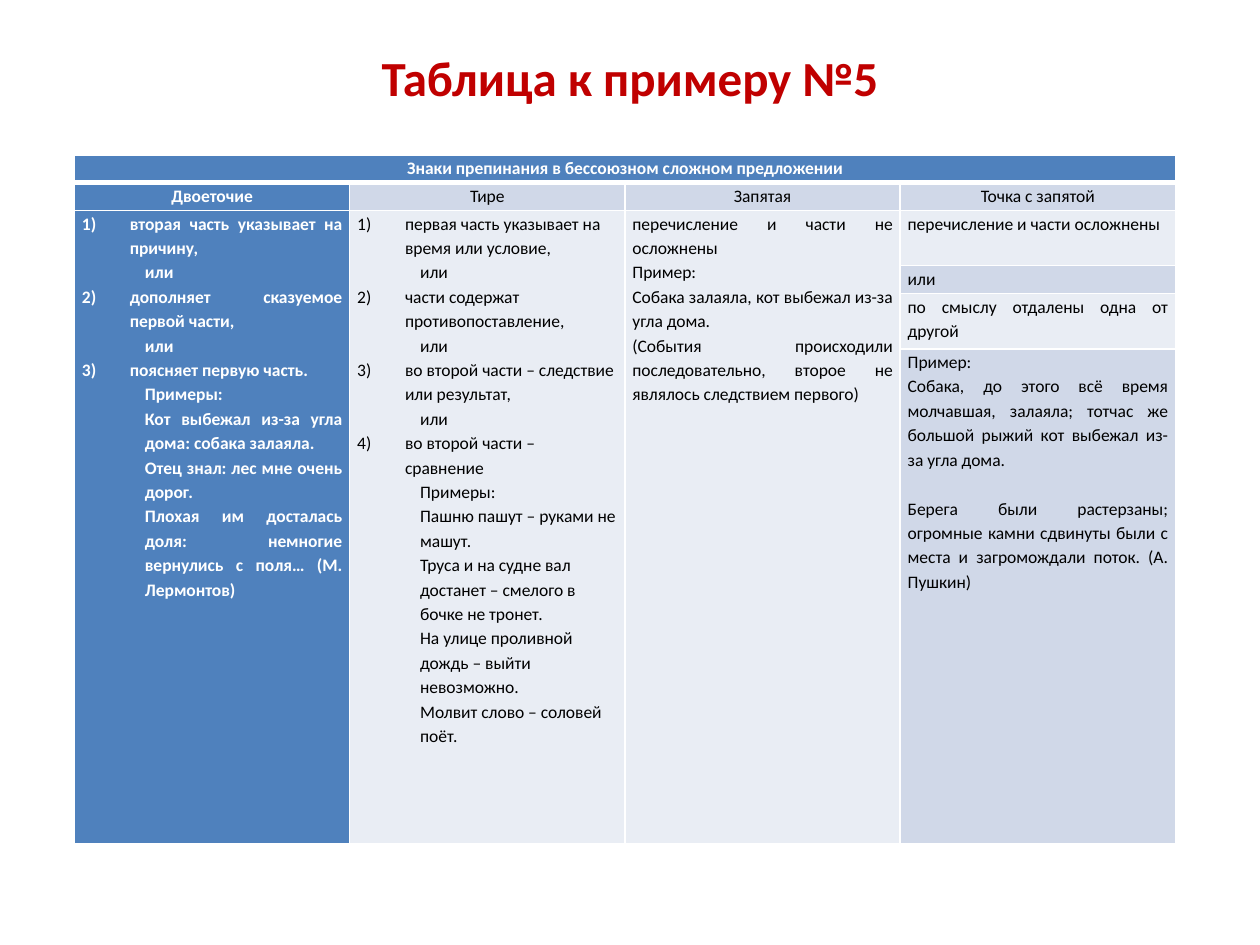
from lxml.etree import SubElement
from pptx import Presentation
from pptx.dml.color import RGBColor
from pptx.enum.text import MSO_ANCHOR, PP_ALIGN
from pptx.oxml.ns import qn
from pptx.util import Inches, Pt

FONT = "Calibri"
HUE = {"red": "C00000", "blue": "4F81BD", "mid": "D0D8E8",
       "pale": "E9EDF4", "white": "FFFFFF", "black": "000000"}
MID, LEFT, JUST = PP_ALIGN.CENTER, PP_ALIGN.LEFT, PP_ALIGN.JUSTIFY
STEP = 14  # height of one text line in the table, points

# Paragraph kinds: "n" numbered, "i" indented, "p" plain, "g" plain after a gap
OR = ("i", "или")
COLON = [
    ("n", "вторая часть указывает на причину,"), OR,
    ("n", "дополняет сказуемое первой части,"), OR,
    ("n", "поясняет первую часть."),
    ("i", "Примеры:"),
    ("i", "Кот выбежал из-за угла дома: собака залаяла."),
    ("i", "Отец знал: лес мне очень дорог."),
    ("i", "Плохая им досталась доля: немногие вернулись с поля… (М. Лермонтов)"),
]
DASH = [
    ("n", "первая часть указывает на время или условие,"), OR,
    ("n", "части содержат противопоставление,"), OR,
    ("n", "во второй части – следствие или результат,"), OR,
    ("n", "во второй части – сравнение"),
    ("i", "Примеры:"),
    ("i", "Пашню пашут – руками не машут."),
    ("i", "Труса и на судне вал достанет – смелого в бочке не тронет."),
    ("i", "На улице проливной дождь – выйти невозможно."),
    ("i", "Молвит слово – соловей поёт."),
]
COMMA = [
    ("p", "перечисление и части не осложнены"),
    ("p", "Пример:"),
    ("p", "Собака залаяла, кот выбежал из-за угла дома."),
    ("p", "(События происходили последовательно, второе не являлось "
          "следствием первого)"),
]
SEMI = [
    [("p", "перечисление и части осложнены")],
    [("p", "или")],
    [("p", "по смыслу отдалены одна от другой")],
    [("p", "Пример:"),
     ("p", "Собака, до этого всё время молчавшая, залаяла; тотчас же "
           "большой рыжий кот выбежал из-за угла дома."),
     ("g", "Берега были растерзаны; огромные камни сдвинуты были с места "
           "и загромождали поток. (А. Пушкин)")],
]
HEADS = ["Двоеточие", "Тире", "Запятая", "Точка с запятой"]


def rgb(name):
    return RGBColor.from_string(HUE[name])


def add_run(para, text, size, hue, bold):
    run = para.add_run()
    run.text = text
    font = run.font
    font.name, font.size, font.bold = FONT, Pt(size), bold
    font.color.rgb = rgb(hue)


def set_edges(cell, top, bottom):
    """White cell borders; top and bottom widths in points."""
    props = cell._tc.get_or_add_tcPr()
    for tag, width in (("lnL", 1), ("lnR", 1), ("lnT", top), ("lnB", bottom)):
        line = SubElement(props, qn("a:" + tag), w=str(Pt(width)))
        fill = SubElement(line, qn("a:solidFill"))
        SubElement(fill, qn("a:srgbClr"), val=HUE["white"])


def style_cell(cell, fill, top=1, bottom=1):
    set_edges(cell, top, bottom)
    cell.fill.solid()
    cell.fill.fore_color.rgb = rgb(fill)
    cell.margin_left = cell.margin_right = Inches(0.06)
    cell.margin_top = cell.margin_bottom = 0


def fill_cell(cell, paras, align, strong=False):
    frame = cell.text_frame
    count = 0
    for i, (kind, text) in enumerate(paras):
        para = frame.add_paragraph() if i else frame.paragraphs[0]
        para.alignment, para.line_spacing = align, 1.15
        if kind == "g":
            para.space_before = Pt(STEP)
        props = para._p.get_or_add_pPr()
        if kind == "n":
            count += 1
            props.set("marL", str(Inches(0.38)))
            props.set("indent", str(-Inches(0.38)))
            SubElement(props, qn("a:buAutoNum"), type="arabicParenR",
                       startAt=str(count))
        elif kind == "i":
            props.set("marL", str(Inches(0.5)))
            props.set("indent", "0")
        add_run(para, text, 10, "white" if strong else "black", strong)


def add_title(slide, x, y, w, h):
    box = slide.shapes.add_textbox(Inches(x), Inches(y), Inches(w), Inches(h))
    frame = box.text_frame
    frame.word_wrap = True
    frame.vertical_anchor = MSO_ANCHOR.MIDDLE
    frame.margin_bottom = Inches(0.52)  # lifts the line above the middle
    para = frame.paragraphs[0]
    para.alignment = MID
    add_run(para, "Таблица к примеру №5", 28, "red", True)


def add_rules(slide, x, y, w, heights):
    rows, cols = len(heights), len(HEADS)
    table = slide.shapes.add_table(
        rows, cols, Inches(x), Inches(y), Inches(w), Inches(sum(heights))).table
    table.first_row = table.horz_banding = False
    for col in table.columns:
        col.width = Inches(w / cols)
    for row, height in zip(table.rows, heights):
        row.height = Inches(height)

    # Fills and borders
    for r in range(rows):
        for c in range(cols):
            if r == 0 or c == 0:
                fill = "blue"
            elif r == 1 or (c == cols - 1 and r % 2):
                fill = "mid"
            else:
                fill = "pale"
            style_cell(table.cell(r, c), fill,
                       top=3 if r == 1 else 1, bottom=3 if r == 0 else 1)

    # Heading rows
    table.cell(0, 0).merge(table.cell(0, cols - 1))
    fill_cell(table.cell(0, 0),
              [("p", "Знаки препинания в бессоюзном сложном предложении")],
              MID, True)
    for c, head in enumerate(HEADS):
        fill_cell(table.cell(1, c), [("p", head)], MID, c == 0)

    # Tall cells, then the split last column
    for c, (paras, align) in enumerate(
            [(COLON, JUST), (DASH, LEFT), (COMMA, JUST)]):
        table.cell(2, c).merge(table.cell(rows - 1, c))
        fill_cell(table.cell(2, c), paras, align, c == 0)
    for r, paras in enumerate(SEMI, 2):
        fill_cell(table.cell(r, cols - 1), paras, JUST)


def main():
    deck = Presentation()
    deck.slide_width, deck.slide_height = Inches(10), Inches(7.5)
    slide = deck.slides.add_slide(deck.slide_layouts[6])
    add_title(slide, 0.5, 0.3, 9, 1.09)
    add_rules(slide, 0.59, 1.23, 8.74, [0.22, 0.22, 0.44, 0.22, 0.44, 3.93])
    deck.save("out.pptx")


if __name__ == "__main__":
    main()
